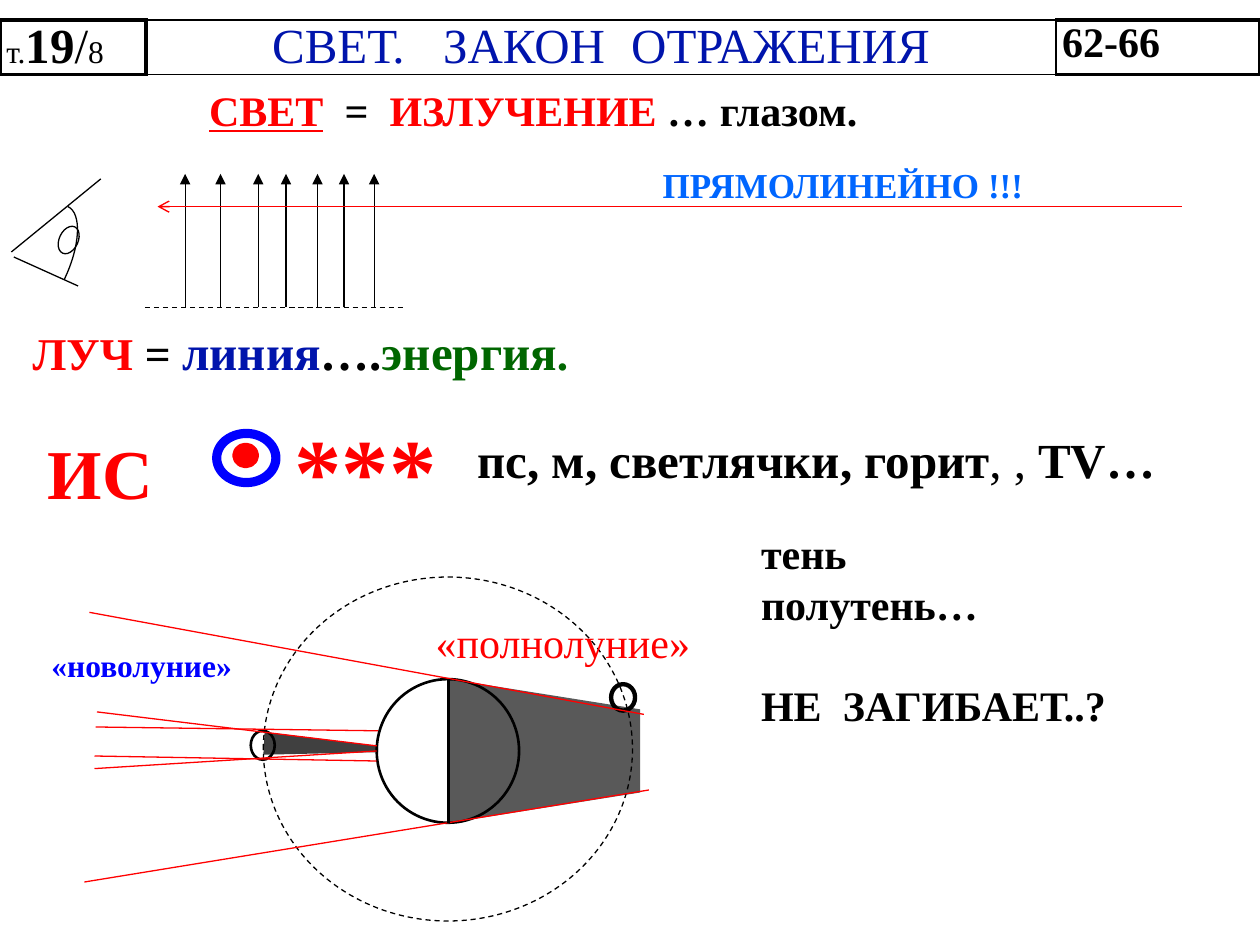
import pptx
import pptx.util
import pptx.dml.color
import pptx.enum.dml
import pptx.enum.shapes
import pptx.enum.text
import pptx.oxml
import pptx.oxml.ns

Inches = pptx.util.Inches
Pt = pptx.util.Pt
FACE = "Times New Roman"
BLACK, RED, BLUE, NAVY = "000000", "FF0000", "0000FF", "0014AC"
DASH = {"dash_style": pptx.enum.dml.MSO_LINE.DASH}
LEFT, MID = pptx.enum.text.PP_ALIGN.LEFT, pptx.enum.text.PP_ALIGN.CENTER
NS = pptx.oxml.ns.nsdecls("a")


def paint(color, code):
    color.rgb = pptx.dml.color.RGBColor.from_string(code)


def put(thing, values):
    for name, value in values.items():
        setattr(thing, name, value)


def look(size, code, bold=True, gap=0, **more):
    """Format values of a run; gap is extra spacing in points."""
    font = {"name": FACE, "size": Pt(size), "bold": bold, **more}
    return {"font": font, "code": code, "gap": gap}


def write(para, runs, align=LEFT):
    para.alignment = align
    for text, style in runs:
        run = para.add_run()
        run.text = text
        put(run.font, style["font"])
        paint(run.font.color, style["code"])
        if style["gap"]:
            run.font._element.set("spc", str(style["gap"] * 100))


def place(shape, box):
    names = ("left", "top", "width", "height")
    put(shape, {name: Inches(size) for name, size in zip(names, box)})
    put(shape.text_frame, {
        "word_wrap": True,
        "auto_size": pptx.enum.text.MSO_AUTO_SIZE.NONE,
        "vertical_anchor": pptx.enum.text.MSO_ANCHOR.TOP,
    })


def add_text(slide, box, *runs):
    shape = slide.shapes.add_textbox(0, 0, 0, 0)
    place(shape, box)
    write(shape.text_frame.paragraphs[0], runs)


def ink(line, code, width, more):
    paint(line.color, code)
    put(line, {"width": Pt(width), **more})


def add_line(slide, start, end, code=BLACK, width=0.75, head=None, **more):
    ends = [Inches(n) for n in (*start, *end)]
    line = slide.shapes.add_connector(
        pptx.enum.shapes.MSO_CONNECTOR.STRAIGHT, *ends)
    ink(line.line, code, width, more)
    if head:
        line.line._get_or_add_ln().append(
            pptx.oxml.parse_xml(f'<a:tailEnd {NS} type="{head}"/>'))
    line._element.spPr.append(pptx.oxml.parse_xml(f"<a:effectLst {NS}/>"))


def add_ring(slide, box, code=BLACK, width=1.5, fill=None, turn=0, **more):
    ring = slide.shapes.add_shape(pptx.enum.shapes.MSO_SHAPE.OVAL,
                                  *[Inches(n) for n in box])
    ring.shadow.inherit = False
    ring.rotation = turn
    ring.fill.background()
    if fill:
        ring.fill.solid()
        paint(ring.fill.fore_color, fill)
    ink(ring.line, code, width, more)


def add_path(slide, points, fill=None):
    """A filled outline, or an open thin line when there is no fill."""
    spots = [(Inches(x), Inches(y)) for x, y in points]
    pen = slide.shapes.build_freeform(*spots[0])
    pen.add_line_segments(spots[1:], close=bool(fill))
    shape = pen.convert_to_shape()
    shape.shadow.inherit = False
    if fill:
        shape.fill.solid()
        paint(shape.fill.fore_color, fill)
        shape.line.fill.background()
    else:
        shape.fill.background()
        ink(shape.line, BLACK, 0.75, {})


def curve(a, b, c, d, steps=16):
    points = []
    for i in range(steps + 1):
        t = i / steps
        u = 1 - t
        points.append(tuple(
            u**3 * p + 3 * u * u * t * q + 3 * u * t * t * r + t**3 * s
            for p, q, r, s in zip(a, b, c, d)))
    return points


def edge(cell, widths):
    props = cell._tc.get_or_add_tcPr()
    for i, (side, width) in enumerate(zip("LRTB", widths)):
        props.insert(i, pptx.oxml.parse_xml(
            f'<a:ln{side} {NS} w="{Pt(width)}"><a:solidFill>'
            f'<a:srgbClr val="{BLACK}"/></a:solidFill></a:ln{side}>'))


def add_header(slide):
    frame = slide.shapes.add_table(
        1, 3, 0, Inches(0.16), Inches(10), Inches(0.43))
    table = frame.table
    put(table, {"first_row": False, "horz_banding": False})
    large = look(28, NAVY, False)
    small = look(18, BLACK, False)
    cells = [
        (1.16, LEFT, (2.25, 2.25, 2.25, 2.25),
         [("т.", small), ("19", look(28, BLACK)),
          ("/", look(28, BLACK, False)), ("8", small)]),
        (7.22, MID, (2.25, 1, 1, 1),
         [("СВЕТ.", large), (" ", look(28, NAVY, False, 15)),
          ("ЗАКОН", large), (" ", look(28, NAVY, False, 8)),
          ("ОТРАЖЕНИЯ", large)]),
        (1.62, LEFT, (1, 2.25, 2.25, 2.25), [("62-66", look(24, BLACK))]),
    ]
    for i, (width, align, widths, runs) in enumerate(cells):
        table.columns[i].width = Inches(width)
        cell = table.cell(0, i)
        put(cell, {"margin_left": Inches(0.05), "margin_right": Inches(0.05),
                   "margin_top": 0, "margin_bottom": 0})
        cell.fill.background()
        edge(cell, widths)
        write(cell.text_frame.paragraphs[0], runs, align)


def fill_list(body, box):
    place(body, box)
    bold, wide = look(24, BLACK), look(24, BLACK, gap=6)
    rows = [(0, [("тень", bold)]), (0, [("полутень…", bold)]),
            (29, [("НЕ", bold), (" ", wide), ("ЗАГИБАЕТ..?", bold)])]
    for i, (space, runs) in enumerate(rows):
        frame = body.text_frame
        para = frame.add_paragraph() if i else frame.paragraphs[0]
        write(para, runs)
        para.space_before = Pt(space)
        props = para._p.get_or_add_pPr()
        props.set("marL", "0")
        props.set("indent", "0")
        props.append(pptx.oxml.parse_xml(f"<a:buNone {NS}/>"))


def draw_eye(slide):
    add_path(slide, curve((0.54, 1.64), (0.65, 1.69),
                          (0.64, 1.95), (0.51, 2.22)))
    add_line(slide, (0.11, 2.04), (0.62, 2.27))
    add_line(slide, (0.09, 2), (0.8, 1.42))
    add_ring(slide, (0.47, 1.79, 0.15, 0.23), width=0.75, turn=24.8)


def draw_rays(slide):
    for x in (1.47, 1.75, 2.05, 2.27, 2.52, 2.73, 2.97):
        add_line(slide, (x, 2.44), (x, 1.38), head="triangle")
    add_line(slide, (1.15, 2.44), (3.2, 2.44), **DASH)
    add_line(slide, (9.38, 1.64), (1.25, 1.64), RED, 0.79, "arrow")


def draw_moon(slide):
    # Shadows of the moon and the earth
    add_path(slide, [(2.09, 5.99), (3, 5.97), (3, 5.92), (2.1, 5.81)],
             "404040")
    add_path(slide, [(3.57, 6.53), (5.08, 6.29), (5.08, 5.63), (3.57, 5.39)],
             "595959")
    # Earth, new moon, orbit and full moon
    add_ring(slide, (2.99, 5.39, 1.13, 1.14))
    add_ring(slide, (1.99, 5.8, 0.19, 0.23))
    add_ring(slide, (2.09, 4.58, 2.93, 2.73), width=0.75, **DASH)
    add_ring(slide, (4.85, 5.43, 0.19, 0.21), width=2.5)
    # Sun rays
    for start, end in [((0.71, 4.86), (5.11, 5.67)), ((0.67, 7), (5.15, 6.27)),
                       ((0.77, 5.65), (2.99, 5.92)), ((0.75, 6.1), (2.99, 5.96)),
                       ((0.75, 6), (2.99, 6.04)), ((0.76, 5.77), (3, 5.8))]:
        add_line(slide, start, end, RED)
    add_line(slide, (3.56, 5.39), (3.56, 6.53), width=1.5)


def main():
    deck = pptx.Presentation()
    put(deck, {"slide_width": Inches(10), "slide_height": Inches(7.5)})
    slide = deck.slides.add_slide(deck.slide_layouts[1])
    add_header(slide)

    # Heading and list
    title = slide.shapes.title
    place(title, (1.56, 0.62, 6.17, 0.5))
    wide = look(24, BLACK, gap=6)
    write(title.text_frame.paragraphs[0], [
        ("СВЕТ", look(24, RED, underline=True)), (" ", wide),
        ("=", look(24, BLACK)), (" ", wide),
        ("ИЗЛУЧЕНИЕ", look(24, RED)), (" … глазом.", look(24, BLACK))])
    fill_list(slide.placeholders[1], (5.94, 4.14, 3.75, 1.72))

    # Light beams
    draw_eye(slide)
    draw_rays(slide)
    add_text(slide, (0.16, 2.5, 4.61, 0.57),
             ("ЛУЧ", look(26, RED)), (" = ", look(26, BLACK)),
             ("линия", look(28, NAVY)), ("….", look(28, BLACK)),
             ("энергия", look(28, "006600")), (".", look(26, "006600")))
    add_text(slide, (5.16, 1.25, 4.61, 0.44),
             ("ПРЯМОЛИНЕЙНО !!!", look(20, "0066FF")))

    # Light sources
    add_text(slide, (3.69, 3.36, 5.92, 0.57),
             ("пс, м, светлячки, горит", look(28, BLACK)),
             (", , ", look(28, BLACK, False)), ("TV…", look(28, BLACK)))
    add_text(slide, (0.28, 3.36, 1.05, 0.77), ("ИС", look(40, RED)))
    add_ring(slide, (1.72, 3.44, 0.47, 0.39), BLUE, 5.25)
    add_ring(slide, (1.88, 3.55, 0.14, 0.13), RED, 5.25, RED)
    add_text(slide, (2.24, 3.21, 1.41, 1.01), ("***", look(54, RED)))

    # Moon phases
    draw_moon(slide)
    add_text(slide, (0.31, 5.08, 1.72, 0.4), ("«новолуние»", look(18, BLUE)))
    add_text(slide, (3.36, 4.84, 2.27, 0.5),
             ("«полнолуние»", look(24, RED, False)))
    deck.save("out.pptx")


if __name__ == "__main__":
    main()
